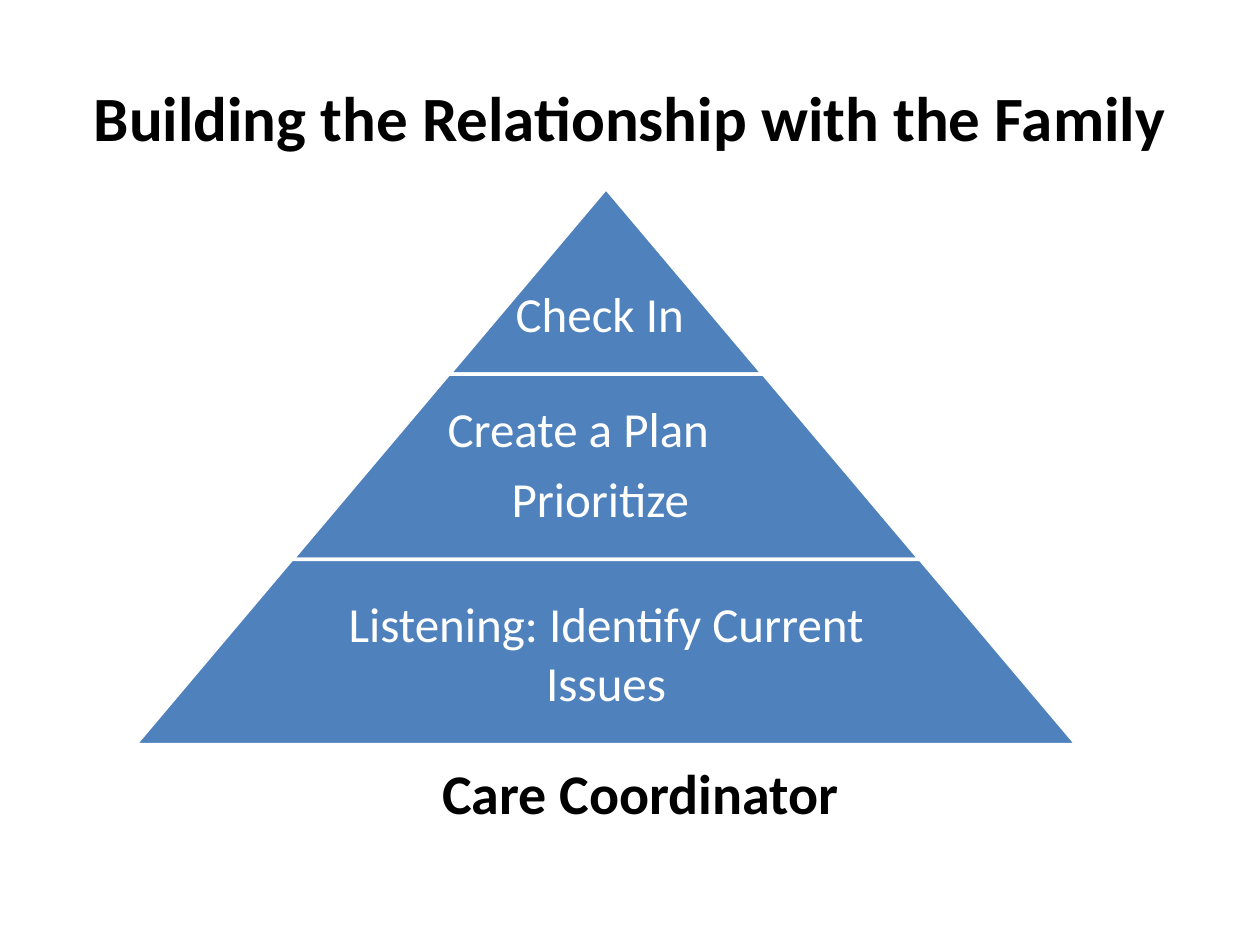
from pptx import Presentation
from pptx.dml.color import RGBColor
from pptx.enum import shapes, text
from pptx.util import Inches, Pt

BLUE = RGBColor(0x4F, 0x81, 0xBD)
WHITE = RGBColor(0xFF, 0xFF, 0xFF)
BLACK = RGBColor(0, 0, 0)
FONT = "Calibri"

TITLE = ("Building the Relationship with the Family", (0.5, 0.3, 9, 1.25), 36)
CAPTION = ("Care Coordinator", (1.71, 5.97, 6.75, 0.64), 32)

# Tier text, label centre, label width, vertical shift, line spacing
TIERS = [
    ("Check In", 4.76, 2.49, 0.28, 0.9),
    ("Create a Plan\nPrioritize", 4.59, 3.23, 0, 0.9),
    ("Listening: Identify Current Issues", 4.81, 4.85, 0, 1),
]
PRIORITIZE_INDENT = 0.35

CENTER, TOP = 4.81, 1.5
TIER_HEIGHT, WIDTH_STEP = 1.47, 2.49
SLOPE = 0.844


def add_label(page, words, place, size, color, bold=False, spacing=1, inset=0.05):
    box = page.shapes.add_textbox(*map(Inches, place))
    frame = box.text_frame
    frame.word_wrap = True
    frame.vertical_anchor = text.MSO_ANCHOR.MIDDLE
    frame.margin_left = frame.margin_right = Inches(inset)
    frame.margin_top = frame.margin_bottom = Inches(inset)
    frame.text = words
    for number, para in enumerate(frame.paragraphs):
        para.alignment = text.PP_ALIGN.CENTER
        para.line_spacing = spacing
        if number < len(frame.paragraphs) - 1:
            para.space_after = Pt(10)
        for span in para.runs:
            span.font.name = FONT
            span.font.size = Pt(size)
            span.font.bold = bold
            span.font.color.rgb = color
    return box


def add_tier(page, level):
    width = WIDTH_STEP * (level + 1)
    top = TOP + TIER_HEIGHT * level
    tier = page.shapes.add_shape(
        shapes.MSO_SHAPE.TRAPEZOID,
        *map(Inches, (CENTER - width / 2, top, width, TIER_HEIGHT)),
    )
    tier.adjustments[0] = SLOPE
    tier.shadow.inherit = False
    tier.fill.solid()
    tier.fill.fore_color.rgb = BLUE
    tier.line.color.rgb = WHITE
    tier.line.width = Pt(2)

    words, center, label_width, shift, spacing = TIERS[level]
    place = (center - label_width / 2, top + shift, label_width, TIER_HEIGHT)
    return add_label(page, words, place, 28, WHITE, spacing=spacing, inset=0.04)


def main():
    deck = Presentation()
    deck.slide_width, deck.slide_height = Inches(10), Inches(7.5)
    page = deck.slides.add_slide(deck.slide_layouts[6])

    add_label(page, *TITLE, BLACK, bold=True)
    labels = [add_tier(page, level) for level in range(len(TIERS))]
    prioritize = labels[1].text_frame.paragraphs[1]
    prioritize._p.get_or_add_pPr().set("marL", str(Inches(PRIORITIZE_INDENT)))
    add_label(page, *CAPTION, BLACK, bold=True)

    deck.save("out.pptx")


if __name__ == "__main__":
    main()
